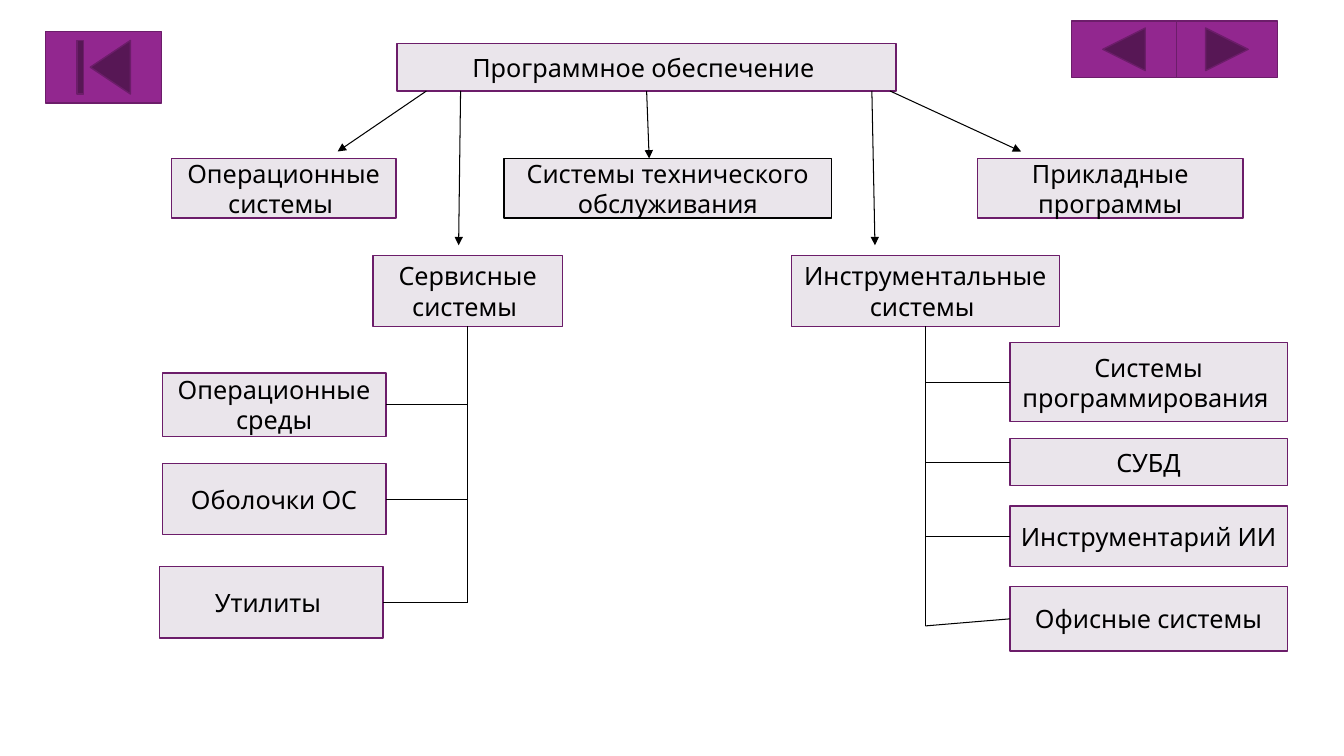
from lxml.etree import SubElement
from pptx import Presentation
from pptx.dml.color import RGBColor
from pptx.enum.shapes import MSO_CONNECTOR, MSO_SHAPE as SHAPE
from pptx.enum.text import MSO_ANCHOR, PP_ALIGN
from pptx.oxml.ns import qn
from pptx.util import Pt

COLORS = {"box": "EAE5EB", "border": "6C1D6A", "button": "92278F", "ink": "000000"}
FONT = "League Spartan"
TOP, LEFT, BOTTOM, RIGHT = range(4)


def rgb(name):
    """Return the palette colour of that name."""
    return RGBColor.from_string(COLORS[name])


def add_shape(slide, kind, box, fill, border="border"):
    """Add a filled, outlined preset shape."""
    shape = slide.shapes.add_shape(kind, *map(Pt, box))
    shape.shadow.inherit = False
    shape.fill.solid()
    shape.fill.fore_color.rgb = rgb(fill)
    shape.line.color.rgb = rgb(border)
    shape.line.width = Pt(1)
    return shape


def add_node(slide, box, text, border="border"):
    """Add a diagram box with centred text."""
    node = add_shape(slide, SHAPE.RECTANGLE, box, "box", border)
    frame = node.text_frame
    frame.word_wrap = True
    frame.vertical_anchor = MSO_ANCHOR.MIDDLE
    frame.text = text
    for paragraph in frame.paragraphs:
        paragraph.alignment = PP_ALIGN.CENTER
        paragraph.font.name = FONT
        paragraph.font.size = Pt(18)
        paragraph.font.color.rgb = rgb("ink")
    return node


def add_line(slide, start, end, arrow=False):
    """Add a thin straight line, with an arrowhead at its end on request."""
    line = slide.shapes.add_connector(MSO_CONNECTOR.STRAIGHT, *map(Pt, (*start, *end)))
    line.line.color.rgb = rgb("ink")
    line.line.width = Pt(0.75)
    properties = line._element.spPr
    if arrow:
        SubElement(properties.find(qn("a:ln")), qn("a:tailEnd"), type="triangle")
    SubElement(properties, qn("a:effectLst"))
    return line


def add_navigation(slide, box):
    """Add the back and forward buttons side by side."""
    left, top, width, height = box
    back_width = width * 0.51
    add_shape(slide, SHAPE.ACTION_BUTTON_FORWARD_OR_NEXT,
              (left + back_width, top, width - back_width, height), "button")
    add_shape(slide, SHAPE.ACTION_BUTTON_BACK_OR_PREVIOUS,
              (left, top, back_width, height), "button")


def add_classes(slide, box):
    """Add the root box, the first row of classes and all arrows from the root."""
    left, top, width, height = box
    root_height, row_height = 33.8, 42.5
    root_bottom, row_top = top + root_height, top + height - row_height
    root = add_node(slide, (left + 161.3, top, 356.4, root_height),
                    "Программное обеспечение ")
    for offset, node_width, text, border in (
            (0, 160.6, "Операционные\nсистемы ", "border"),
            (237.6, 234, "Системы технического обслуживания", "ink"),
            (width - 189.4, 189.4, "Прикладные программы", "border")):
        add_node(slide, (left + offset, row_top, node_width, row_height), text, border)
    for start, end, tip in ((182.2, 118.8, row_top - 5), (513.4, 607, row_top - 5),
                            (206.6, 205.2, row_top + 62), (500.4, 502.6, row_top + 62)):
        add_line(slide, (left + start, root_bottom), (left + end, tip), arrow=True)
    middle = add_line(slide, (left + 339.5, root_bottom), (left + 341.3, row_top), arrow=True)
    middle.begin_connect(root, BOTTOM)


def add_branch(slide, box, title, spine_end, children, side):
    """Add a class box, its spine, and its children joined by their given side."""
    left, top, width, height = box
    parent = add_node(slide, box, title)
    spine = left + width / 2
    trunk = add_line(slide, (spine, top + height), (spine, spine_end))
    trunk.begin_connect(parent, BOTTOM)
    for index, (child_box, text) in enumerate(children):
        child_left, child_top, child_width, child_height = child_box
        child = add_node(slide, child_box, text)
        middle = child_top + child_height / 2
        edge = child_left + (child_width if side == RIGHT else 0)
        joint = spine_end if index == len(children) - 1 else middle
        twig = add_line(slide, (edge, middle), (spine, joint))
        twig.begin_connect(child, side)


def main():
    """Build the software classification slide."""
    deck = Presentation()
    deck.slide_width, deck.slide_height = Pt(960), Pt(540)
    slide = deck.slides.add_slide(deck.slide_layouts[6])
    add_shape(slide, SHAPE.ACTION_BUTTON_BEGINNING, (32.6, 22.5, 83, 51), "button")
    add_navigation(slide, (765.4, 15, 147, 40.5))
    add_classes(slide, (122.4, 31.2, 765.4, 124.5))
    add_branch(slide, (266.4, 182.4, 135.4, 50.8), "Сервисные системы ", 430.3, (
        ((115.9, 266.4, 159.8, 45.4), "Операционные среды"),
        ((115.9, 331.2, 159.8, 50.8), "Оболочки ОС"),
        ((113.8, 404.8, 159.8, 51), "Утилиты ")), RIGHT)
    tools = ((244.8, 56.4, "Системы программирования "), (313.2, 33.8, "СУБД"),
             (361.4, 43.2, "Инструментарий ИИ"), (419, 46.1, "Офисные системы"))
    add_branch(slide, (565.2, 182.4, 191.6, 50.8), "Инструментальные системы ", 447.1,
               [((721.4, top, 198.2, height), text) for top, height, text in tools], LEFT)
    deck.save("out.pptx")


if __name__ == "__main__":
    main()
